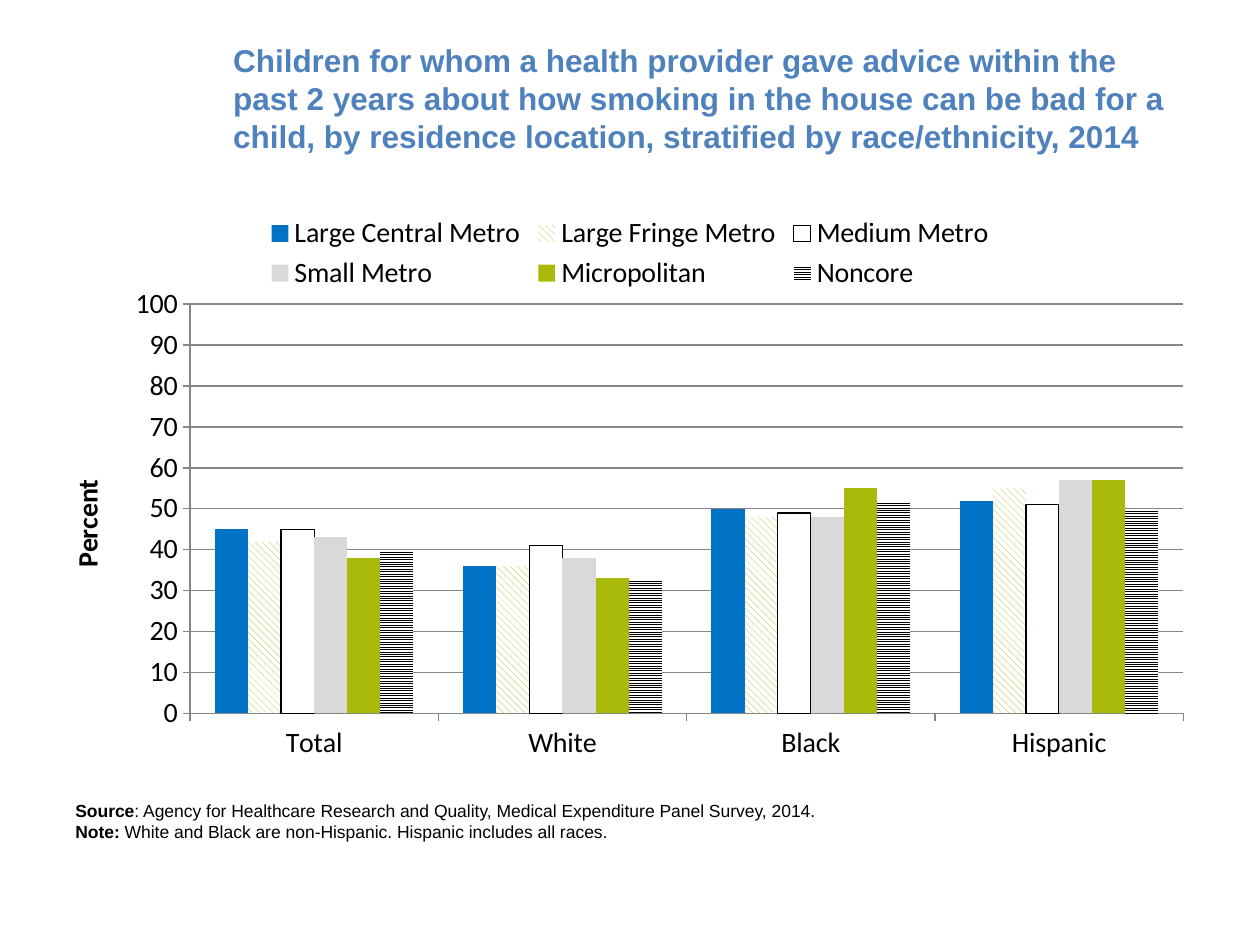
from lxml import etree
from pptx import Presentation
from pptx.chart.data import CategoryChartData
from pptx.dml.color import RGBColor
from pptx.enum.chart import XL_CHART_TYPE, XL_LEGEND_POSITION, XL_TICK_MARK
from pptx.enum.dml import MSO_PATTERN
from pptx.enum.text import MSO_ANCHOR, PP_ALIGN
from pptx.oxml.ns import qn
from pptx.util import Inches, Pt

CLUSTERED = XL_CHART_TYPE.COLUMN_CLUSTERED
LEGEND_TOP = XL_LEGEND_POSITION.TOP
TICK_OUTSIDE = XL_TICK_MARK.OUTSIDE
DIAGONAL = MSO_PATTERN.WIDE_DOWNWARD_DIAGONAL
HORIZONTAL = MSO_PATTERN.LIGHT_HORIZONTAL
MIDDLE = MSO_ANCHOR.MIDDLE
LEFT = PP_ALIGN.LEFT

BLACK = RGBColor(0, 0, 0)
WHITE = RGBColor(255, 255, 255)
TITLE_BLUE = RGBColor(0x4F, 0x81, 0xBD)
BLUE = RGBColor(0x00, 0x72, 0xC6)
GREEN = RGBColor(0xAA, 0xBA, 0x0A)
LIGHT_GRAY = RGBColor(0xD9, 0xD9, 0xD9)
AXIS_GRAY = RGBColor(0x86, 0x86, 0x86)

MARGIN, CONTENT_WIDTH = 0.5, 9
PLOT_AREA = {"x": 0.112, "y": 0.181, "w": 0.876, "h": 0.722}
TITLE = (
    "Children for whom a health provider gave advice within the past 2 years "
    "about how smoking in the house can be bad for a child, by residence "
    "location, stratified by race/ethnicity, 2014"
)
FOOTNOTES = [
    ("Source", ": Agency for Healthcare Research and Quality, "
               "Medical Expenditure Panel Survey, 2014."),
    ("Note: ", "White and Black are non-Hispanic. Hispanic includes all races."),
]
CATEGORIES = ["Total", "White", "Black", "Hispanic"]
SERIES = [
    ("Large Central Metro", (45, 36, 50, 52), BLUE, None, None),
    ("Large Fringe Metro", (42, 36, 48, 55), GREEN, DIAGONAL, None),
    ("Medium Metro", (45, 41, 49, 51), WHITE, None, BLACK),
    ("Small Metro", (43, 38, 48, 57), LIGHT_GRAY, None, None),
    ("Micropolitan", (38, 33, 55, 57), GREEN, None, None),
    ("Noncore", (40, 33, 52, 50), BLACK, HORIZONTAL, None),
]


def format_font(font, size=16, name="Calibri", color=BLACK, bold=False):
    font.size = Pt(size)
    font.name = name
    font.color.rgb = color
    font.bold = bold


def add_text(paragraph, text, **font_format):
    run = paragraph.add_run()
    run.text = text
    format_font(run.font, **font_format)


def add_title(slide):
    title = slide.shapes.title
    title.left, title.top = Inches(1.75), Inches(0.3)
    title.width, title.height = Inches(7.75), Inches(0.95)
    title.text_frame.vertical_anchor = MIDDLE
    paragraph = title.text_frame.paragraphs[0]
    paragraph.alignment = LEFT
    add_text(paragraph, TITLE, size=18, name="Arial", color=TITLE_BLUE, bold=True)


def format_axis(axis):
    axis.major_tick_mark = TICK_OUTSIDE
    axis.format.line.color.rgb = AXIS_GRAY
    axis.format.line.width = Pt(0.75)
    format_font(axis.tick_labels.font)


def format_value_axis(axis):
    format_axis(axis)
    axis.minimum_scale, axis.maximum_scale, axis.major_unit = 0, 100, 10
    axis.tick_labels.number_format = "0"
    axis.tick_labels.number_format_is_linked = False
    axis.has_major_gridlines = True
    axis.major_gridlines.format.line.color.rgb = AXIS_GRAY
    axis.major_gridlines.format.line.width = Pt(0.75)
    add_text(axis.axis_title.text_frame.paragraphs[0], "Percent", bold=True)


def format_series(series, color, pattern, outline):
    fill = series.format.fill
    if pattern:
        fill.patterned()
        fill.pattern = pattern
        fill.fore_color.rgb = color
        fill.back_color.rgb = WHITE
    else:
        fill.solid()
        fill.fore_color.rgb = color
    series.invert_if_negative = False
    if outline:
        series.format.line.color.rgb = outline
        series.format.line.width = Pt(0.75)
    else:
        series.format.line.fill.background()


def place_plot_area(chart):
    plot_area = chart.element.find(".//" + qn("c:plotArea"))
    for layout in plot_area.findall(qn("c:layout")):
        plot_area.remove(layout)
    layout = etree.Element(qn("c:layout"))
    plot_area.insert(0, layout)
    manual = etree.SubElement(layout, qn("c:manualLayout"))
    settings = {"layoutTarget": "inner", "xMode": "edge", "yMode": "edge", **PLOT_AREA}
    for tag, value in settings.items():
        etree.SubElement(manual, qn("c:" + tag)).set("val", str(value))


def add_column_chart(slide):
    data = CategoryChartData(number_format="0")
    data.categories = CATEGORIES
    for name, values, *_ in SERIES:
        data.add_series(name, values)
    chart = slide.shapes.add_chart(
        CLUSTERED, Inches(MARGIN), Inches(1.6), Inches(CONTENT_WIDTH), Inches(4.5), data
    ).chart
    format_font(chart.font, size=10, name="Arial")
    chart.has_title = False
    chart.has_legend = True
    chart.legend.position = LEGEND_TOP
    chart.legend.include_in_layout = False
    format_font(chart.legend.font)
    format_axis(chart.category_axis)
    format_value_axis(chart.value_axis)
    plot = chart.plots[0]
    plot.gap_width, plot.overlap = 150, 0
    plot.vary_by_categories = False
    for series, (_, _, color, pattern, outline) in zip(plot.series, SERIES):
        format_series(series, color, pattern, outline)
    place_plot_area(chart)


def add_footnotes(slide):
    box = slide.shapes.add_textbox(
        Inches(MARGIN), Inches(6.3), Inches(CONTENT_WIDTH), Inches(0.44)
    )
    frame = box.text_frame
    frame.word_wrap = True
    for index, (label, text) in enumerate(FOOTNOTES):
        paragraph = frame.add_paragraph() if index else frame.paragraphs[0]
        add_text(paragraph, label, size=10, name="Arial", bold=True)
        add_text(paragraph, text, size=10, name="Arial")


def main():
    presentation = Presentation()
    presentation.slide_width, presentation.slide_height = Inches(10), Inches(7.5)
    slide = presentation.slides.add_slide(presentation.slide_layouts[5])
    add_title(slide)
    add_column_chart(slide)
    add_footnotes(slide)
    presentation.save("out.pptx")


if __name__ == "__main__":
    main()
